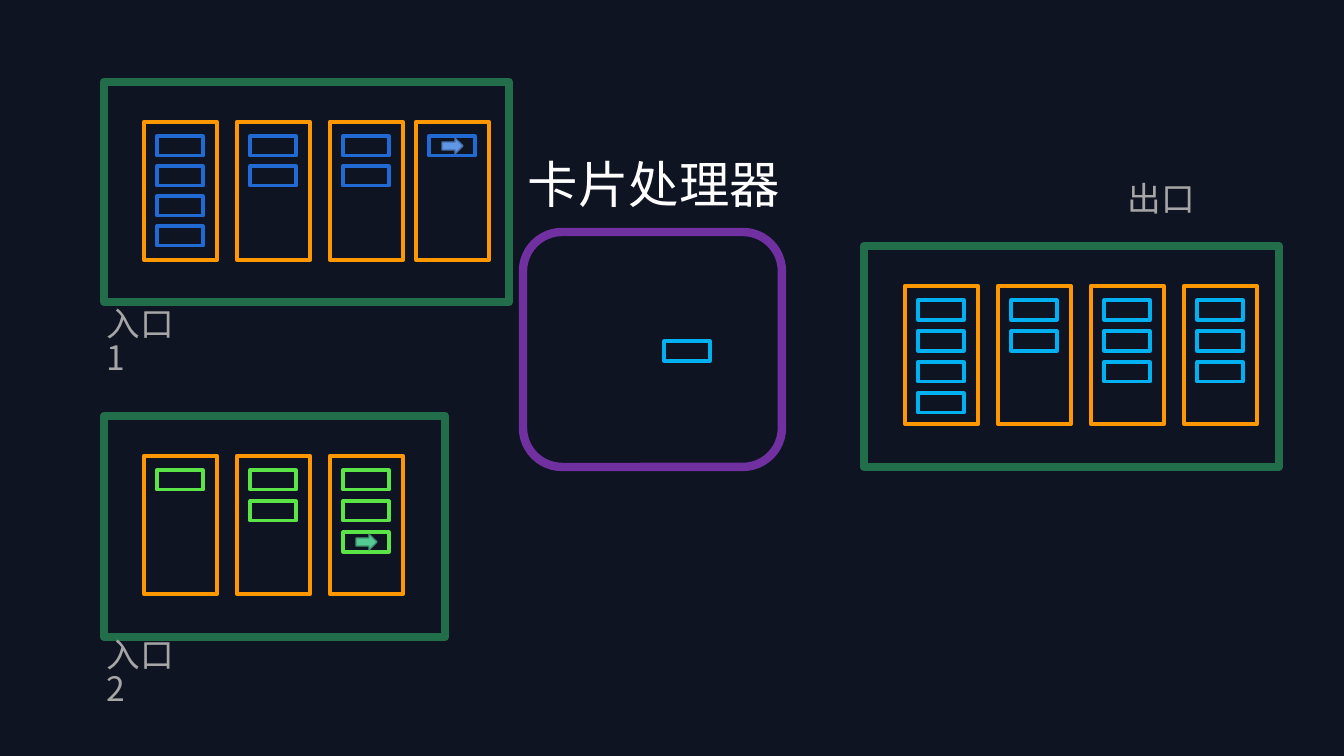
from dataclasses import dataclass

from pptx import Presentation
from pptx.dml.color import RGBColor
from pptx.enum import shapes, text
from pptx.oxml import ns
from pptx.util import Emu, Pt

PX = 914400 / 100.8


@dataclass(frozen=True)
class Theme:
    background: str = "0F1423"
    panel: str = "226E4B"
    tray: str = "FF9800"
    processor: str = "7030A0"
    inlet_one: str = "2169D3"
    inlet_two: str = "5BE448"
    outlet: str = "00B0F0"
    arrow_one: tuple = ("6096E6", "476FAA")
    arrow_two: tuple = ("56CA95", "40956E")
    label: str = "A6A6A6"
    title: str = "FFFFFF"
    font: str = "Noto Sans CJK SC"
    label_size: int = 24
    title_size: int = 36
    thick: float = 6
    medium: float = 3
    thin: float = 2.25


THEME = Theme()
CARD_SIZE = (46, 20)
TRAY_SIZE = (73, 138)


def px(*lengths):
    return [Emu(round(length * PX)) for length in lengths]


def add_outline(slide, box, color, width, kind="RECTANGLE", fill=None):
    shape = slide.shapes.add_shape(shapes.MSO_SHAPE[kind], *px(*box))
    shape.shadow.inherit = False
    if fill:
        shape.fill.solid()
        shape.fill.fore_color.rgb = RGBColor.from_string(fill)
    else:
        shape.fill.background()
    shape.line.color.rgb = RGBColor.from_string(color)
    shape.line.width = Pt(width)
    return shape


def add_label(slide, box, wording, size, color, wrap=False):
    frame = slide.shapes.add_textbox(*px(*box)).text_frame
    frame.word_wrap = wrap
    frame.auto_size = text.MSO_AUTO_SIZE.NONE
    paragraph = frame.paragraphs[0]
    paragraph.line_spacing = 0.83
    run = paragraph.add_run()
    run.text = wording
    for name, value in {"name": THEME.font, "size": Pt(size)}.items():
        setattr(run.font, name, value)
    run.font.color.rgb = RGBColor.from_string(color)
    east_asian = run.font._element.makeelement(ns.qn("a:ea"), {"typeface": THEME.font})
    run.font._element.append(east_asian)


def add_card(slide, left, top, color, arrow=None):
    add_outline(slide, (left, top, *CARD_SIZE), color, THEME.thin)
    if arrow:
        fill, line = arrow
        add_outline(slide, (left + 13, top + 2, 21, 16), line, 1, "RIGHT_ARROW", fill)


def add_panel(slide, box, tray_lefts, card_counts, pitch, color, arrow=None):
    left, top, width, height = box
    add_outline(slide, box, THEME.panel, THEME.thick)
    last_tray = len(card_counts) - 1
    for tray, (offset, count) in enumerate(zip(tray_lefts, card_counts)):
        tray_left, tray_top = left + offset, top + 40
        add_outline(slide, (tray_left, tray_top, *TRAY_SIZE), THEME.tray, THEME.medium)
        for row in range(count):
            leaving = tray == last_tray and row == count - 1
            add_card(slide, tray_left + 13, tray_top + 14 + row * pitch, color,
                     arrow if leaving else None)


def add_processor(slide, box):
    left, top, width, height = box
    add_outline(slide, box, THEME.processor, THEME.thick, "ROUNDED_RECTANGLE")
    add_card(slide, left + 141, top + 109, THEME.outlet)
    add_label(slide, (left - 5, top - 74, 272, 72), "卡片处理器", THEME.title_size, THEME.title)


def build_slide(presentation):
    slide = presentation.slides.add_slide(presentation.slide_layouts[6])
    slide.background.fill.solid()
    slide.background.fill.fore_color.rgb = RGBColor.from_string(THEME.background)

    add_panel(slide, (104, 82, 405, 220), (40, 133, 226, 312), (4, 2, 2, 1), 30,
              THEME.inlet_one, THEME.arrow_one)
    add_panel(slide, (104, 416, 341, 221), (40, 133, 226), (1, 2, 3), 31,
              THEME.inlet_two, THEME.arrow_two)
    add_panel(slide, (864, 246, 415, 221), (41, 134, 227, 320), (4, 2, 3, 3), 31,
              THEME.outlet)
    add_processor(slide, (523, 232, 259, 235))

    for box, wording, wrap in (
        ((97, 305, 104, 50), "入口1", True),
        ((97, 636, 104, 50), "入口2", True),
        ((1118, 180, 88, 50), "出口", False),
    ):
        add_label(slide, box, wording, THEME.label_size, THEME.label, wrap)


def main():
    presentation = Presentation()
    presentation.slide_width, presentation.slide_height = px(1344, 756)
    build_slide(presentation)
    presentation.save("out.pptx")


if __name__ == "__main__":
    main()
